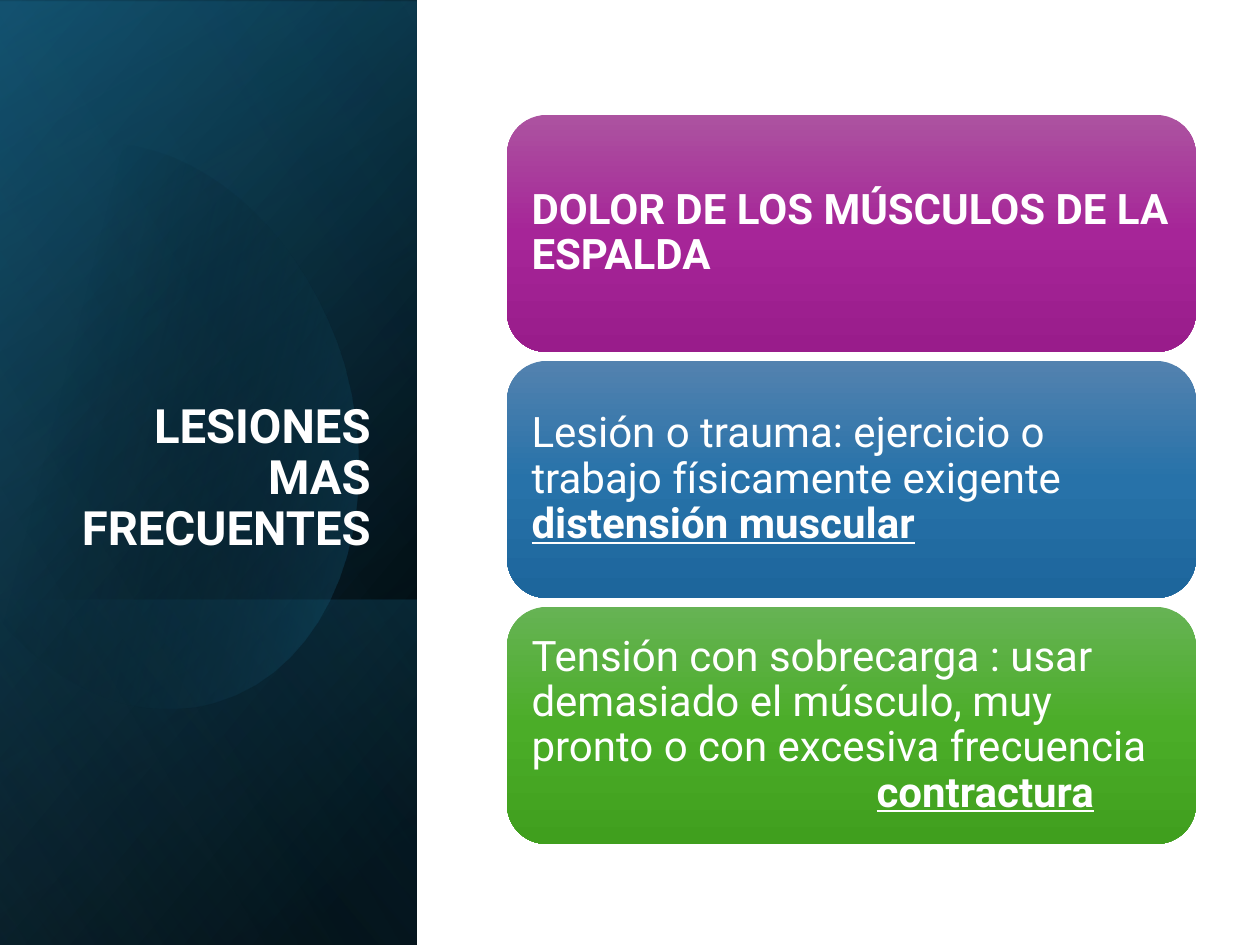
from lxml.etree import SubElement
from pptx import Presentation
from pptx.dml.color import RGBColor
from pptx.enum.shapes import MSO_SHAPE as Shape
from pptx.enum.text import MSO_ANCHOR as Anchor, PP_ALIGN as Align
from pptx.oxml.ns import qn
from pptx.util import Pt

PX = 914400 / 126
FONT = "Roboto"
WHITE = RGBColor(0xFF, 0xFF, 0xFF)
BLACK = RGBColor(0x00, 0x00, 0x00)
NAVY = RGBColor(0x10, 0x48, 0x62)
TEAL = RGBColor(0x15, 0x60, 0x82)
SKY = RGBColor(0x46, 0xB1, 0xE1)
PURPLES = [RGBColor(0xAC, 0x53, 0xA0), RGBColor(0xA6, 0x25, 0x98), RGBColor(0x99, 0x1C, 0x8B)]
BLUES = [RGBColor(0x53, 0x82, 0xAF), RGBColor(0x27, 0x72, 0xA9), RGBColor(0x1D, 0x66, 0x9C)]
GREENS = [RGBColor(0x66, 0xB3, 0x54), RGBColor(0x4B, 0xAD, 0x28), RGBColor(0x40, 0x9F, 0x1E)]

CARDS = [
    (PURPLES, [("DOLOR DE LOS MÚSCULOS DE LA ESPALDA", True, False)], None),
    (BLUES, [("Lesión o trauma: ejercicio o trabajo físicamente exigente\v", False, False),
             ("distensión muscular", True, True)], None),
    (GREENS, [("Tensión con sobrecarga : usar demasiado el músculo, muy pronto "
               "o con excesiva frecuencia\v\t", False, False),
              ("contractura", True, True)], 345),
]


def emu(*lengths):
    return [round(length * PX) for length in lengths]


def paint_gradient(shape, stops, angle):
    shape.shadow.inherit = False
    shape.line.fill.background()
    shape.fill.gradient()
    gradient = shape.fill._xPr.find(qn("a:gradFill"))
    gradient.set("rotWithShape", "1")
    for child in list(gradient):
        gradient.remove(child)
    stop_list = SubElement(gradient, qn("a:gsLst"))
    for position, color, opacity in stops:
        stop = SubElement(stop_list, qn("a:gs"), pos=str(position * 1000))
        tint = SubElement(stop, qn("a:srgbClr"), val=str(color))
        if opacity < 100:
            SubElement(tint, qn("a:alpha"), val=str(opacity * 1000))
    SubElement(gradient, qn("a:lin"), ang=str(angle * 60000), scaled="0")


def add_turned_panel(slide, box, stops, angle):
    x, y, w, h = box
    frame = emu(x + (w - h) / 2, y + (h - w) / 2, h, w)
    panel = slide.shapes.add_shape(Shape.RECTANGLE, *frame)
    panel.rotation = 90
    panel._element.spPr.find(qn("a:xfrm")).set("flipH", "1")
    paint_gradient(panel, stops, angle)


def curve(start, c1, c2, end, steps=16):
    points = []
    for step in range(1, steps + 1):
        t = step / steps
        u = 1 - t
        points.append(tuple(
            u**3 * a + 3 * u * u * t * b + 3 * u * t * t * c + t**3 * d
            for a, b, c, d in zip(start, c1, c2, end)))
    return points


def add_glow(slide, box):
    left, top = box[:2]
    crown, east, south, west = (121, 144), (344, 365), (215, 702), (9, 630)
    shoulder, brow = (-19, 194), (57, 149)
    outline = (
        curve(crown, (215, 154), (307, 242), east)
        + curve(east, (387, 519), (330, 669), south)
        + curve(south, (144, 723), (67, 693), west)
        + [(-4, 615), (-32, 209), shoulder]
        + curve(shoulder, (3, 173), (28, 158), brow)
        + curve(brow, (78, 142), (100, 141), crown))
    points = [emu(left + x, top + y) for x, y in outline]
    builder = slide.shapes.build_freeform(*points[-1])
    builder.add_line_segments(points, close=True)
    paint_gradient(builder.convert_to_shape(), [(29, BLACK, 0), (100, TEAL, 43)], 14)


def style_paragraph(paragraph, size):
    paragraph.line_spacing = 0.9
    paragraph.font.name = FONT
    paragraph.font.size = Pt(size)
    paragraph.font.color.rgb = WHITE


def add_title_panel(slide, box):
    x, y, w, h = box
    add_turned_panel(slide, box, [(8, BLACK, 100), (100, NAVY, 100)], 50)
    add_turned_panel(slide, (x, y + 2, w, h), [(0, BLACK, 0), (99, TEAL, 46)], 30)
    add_turned_panel(slide, (x, y + 600, w, h - 600), [(2, TEAL, 29), (100, BLACK, 30)], 130)
    add_glow(slide, box)
    add_turned_panel(slide, box, [(0, BLACK, 0), (99, SKY, 11)], 120)
    title = slide.shapes.add_textbox(*emu(x + 60, y + 232, 323, 330)).text_frame
    title.word_wrap = True
    title.vertical_anchor = Anchor.BOTTOM
    heading = title.paragraphs[0]
    heading.text = "LESIONES MAS FRECUENTES"
    heading.alignment = Align.RIGHT
    style_paragraph(heading, 27)
    heading.font.bold = True


def add_card(slide, box, colors, parts, tab):
    card = slide.shapes.add_shape(Shape.ROUNDED_RECTANGLE, *emu(*box))
    paint_gradient(card, [(i * 50, color, 100) for i, color in enumerate(colors)], 90)
    frame = card.text_frame
    frame.word_wrap = True
    frame.vertical_anchor = Anchor.MIDDLE
    frame.margin_left, frame.margin_top, frame.margin_right, frame.margin_bottom = emu(13, 13, 13, 13)
    body = frame.paragraphs[0]
    body.alignment = Align.LEFT
    if tab:
        tabs = SubElement(body._p.get_or_add_pPr(), qn("a:tabLst"))
        SubElement(tabs, qn("a:tab"), pos=str(emu(tab)[0]), algn="l")
    style_paragraph(body, 24)
    for text, bold, underline in parts:
        phrase, *rest = text.split("\v")
        runs = [body.add_run()]
        runs[0].text = phrase
        for after_break in rest:
            body.add_line_break()
            if after_break:
                runs.append(body.add_run())
                runs[-1].text = after_break
        for run in runs:
            run.font.bold = bold
            run.font.underline = underline


def add_cards(slide, box):
    x, y, w, h = box
    gap = 9
    height = (h - gap * (len(CARDS) - 1)) / len(CARDS)
    for row, (colors, parts, tab) in enumerate(CARDS):
        add_card(slide, (x, y + row * (height + gap), w, height), colors, parts, tab)


def main():
    deck = Presentation()
    deck.slide_width, deck.slide_height = emu(1260, 945)
    slide = deck.slides.add_slide(deck.slide_layouts[6])
    add_title_panel(slide, (0, 0, 417, 945))
    add_cards(slide, (507, 115, 689, 729))
    deck.save("out.pptx")


if __name__ == "__main__":
    main()
